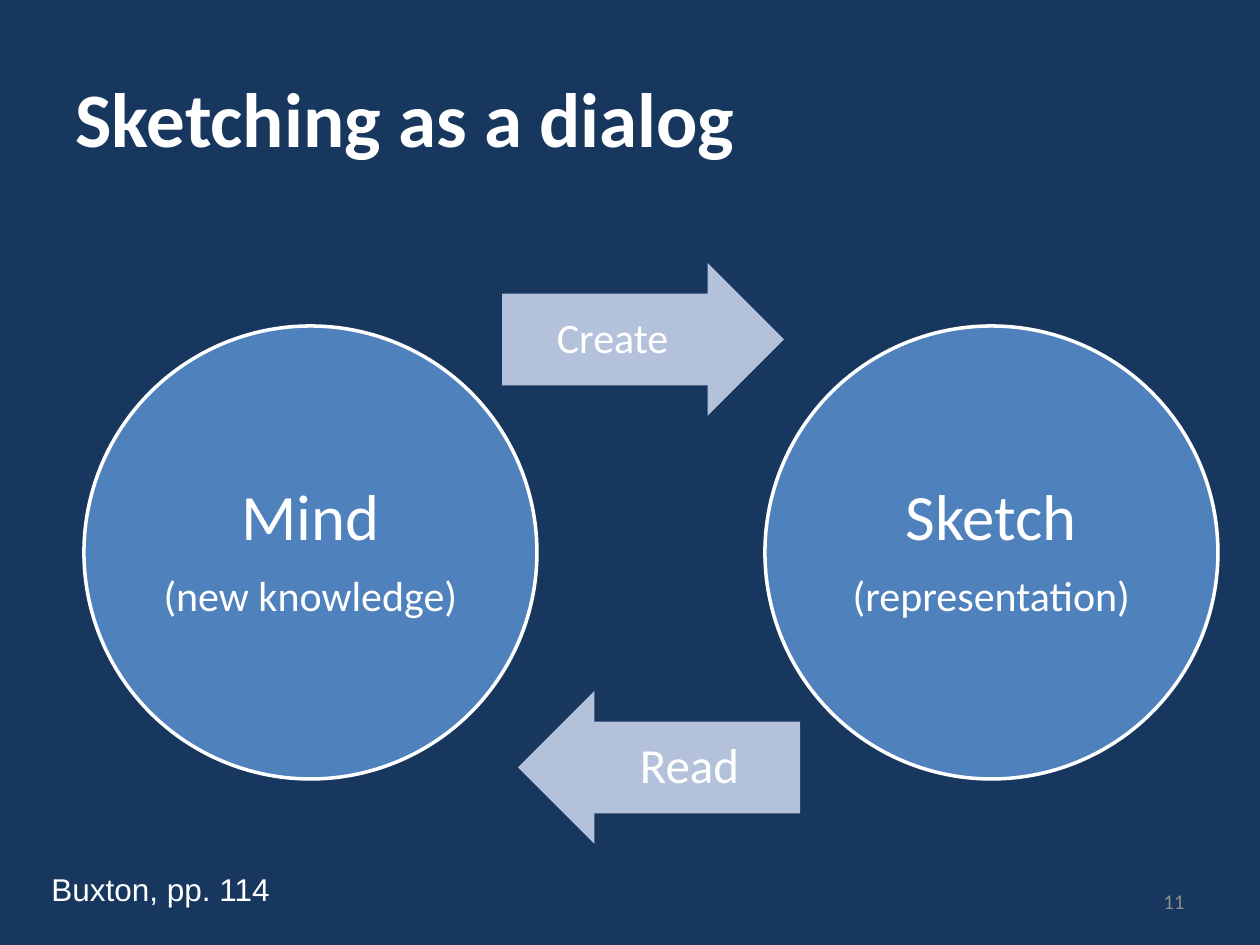
"""Build the slide that shows sketching as a dialog between mind and sketch."""
from dataclasses import dataclass

from pptx import Presentation
from pptx import util as u
from pptx.dml.color import RGBColor
from pptx.enum import shapes, text

EMU_PER_PX = 914400 / 126
NAVY, BLUE, PALE, WHITE, GREY = "17375E", "4F81BD", "B3C1DB", "FFFFFF", "8C8C8C"
CIRCLE_TOP, CIRCLE_SIZE = 326, 453
ARROW_WIDTH, ARROW_HEIGHT, ARROW_INSET = 282, 153, 15
SIDES = ("left", "right", "top", "bottom")
LEFT, CENTER, RIGHT = text.PP_ALIGN.LEFT, text.PP_ALIGN.CENTER, text.PP_ALIGN.RIGHT


@dataclass(frozen=True)
class Circle:
    """One partner of the dialog."""
    left: int
    name: str
    role: str


@dataclass(frozen=True)
class Arrow:
    """One step of the dialog."""
    left: int
    top: int
    label: str
    size: int
    preset: shapes.MSO_SHAPE
    head_side: str


CIRCLES = (
    Circle(84, "Mind", "(new knowledge)"),
    Circle(765, "Sketch", "(representation)"),
)
ARROWS = (
    Arrow(502, 263, "Create", 24, shapes.MSO_SHAPE.RIGHT_ARROW, "right"),
    Arrow(518, 691, "Read", 28, shapes.MSO_SHAPE.LEFT_ARROW, "left"),
)


def px(length: int) -> u.Emu:
    """Turn pixels into EMU."""
    return u.Emu(round(length * EMU_PER_PX))


def paint(fill, color: str) -> None:
    """Give a fill one solid colour."""
    fill.solid()
    fill.fore_color.rgb = RGBColor.from_string(color)


def set_all(target, values: dict) -> None:
    """Set several attributes of one object."""
    for name, value in values.items():
        setattr(target, name, value)


def set_insets(frame, insets: dict) -> None:
    """Set the four insets of a text frame, zero where none is named."""
    set_all(frame, {f"margin_{side}": px(insets.get(side, 0)) for side in SIDES})


def write(para, words: str, size: int, color: str = WHITE, align=CENTER,
          font: str = "Calibri", bold: bool = False) -> None:
    """Write one formatted span into a paragraph."""
    para.alignment = align
    span = para.add_run()
    span.text = words
    set_all(span.font, {"name": font, "size": u.Pt(size), "bold": bold})
    span.font.color.rgb = RGBColor.from_string(color)


def add_figure(page, preset, left: int, top: int, width: int, height: int, color: str):
    """Add a flat, filled shape without an outline."""
    shape = page.shapes.add_shape(preset, px(left), px(top), px(width), px(height))
    shape.shadow.inherit = False
    paint(shape.fill, color)
    shape.line.fill.background()
    set_all(shape.text_frame, {"word_wrap": True, "vertical_anchor": text.MSO_ANCHOR.MIDDLE})
    return shape


def add_circle(page, circle: Circle) -> None:
    """Draw a partner with its name and role."""
    shape = add_figure(page, shapes.MSO_SHAPE.OVAL, circle.left, CIRCLE_TOP,
                       CIRCLE_SIZE, CIRCLE_SIZE, BLUE)
    paint(shape.line.fill, WHITE)
    shape.line.width = u.Pt(2)
    frame = shape.text_frame
    set_insets(frame, dict.fromkeys(SIDES, 6))
    name, role = frame.paragraphs[0], frame.add_paragraph()
    set_all(name, {"line_spacing": 0.9, "space_after": u.Pt(12)})
    role.line_spacing = 0.9
    write(name, circle.name, 37)
    write(role, circle.role, 24)


def add_arrow(page, arrow: Arrow) -> None:
    """Draw a step with its label kept clear of the arrowhead."""
    shape = add_figure(page, arrow.preset, arrow.left, arrow.top,
                       ARROW_WIDTH, ARROW_HEIGHT, PALE)
    shape.adjustments[0], shape.adjustments[1] = 0.6, 0.5
    set_insets(shape.text_frame, {arrow.head_side: ARROW_INSET})
    para = shape.text_frame.paragraphs[0]
    para.line_spacing = 0.9
    write(para, arrow.label, arrow.size)


def add_note(page, left: int, top: int, width: int, height: int, wrap: bool, anchor,
             words: str, size: int, **style) -> None:
    """Add a line of text at the foot of the page."""
    box = page.shapes.add_textbox(px(left), px(top), px(width), px(height))
    set_all(box.text_frame, {"word_wrap": wrap, "vertical_anchor": anchor})
    write(box.text_frame.paragraphs[0], words, size, **style)


def main() -> None:
    """Build and save the deck."""
    deck = Presentation()
    set_all(deck, {"slide_width": px(1260), "slide_height": px(945)})
    page = deck.slides.add_slide(deck.slide_layouts[5])
    paint(page.background.fill, NAVY)

    title = page.shapes.title
    set_all(title, {"left": px(63), "top": px(38), "width": px(1134), "height": px(158)})
    title.text_frame.vertical_anchor = text.MSO_ANCHOR.MIDDLE
    write(title.text_frame.paragraphs[0], "Sketching as a dialog", 44, align=LEFT, bold=True)

    for circle in CIRCLES:
        add_circle(page, circle)
    for arrow in ARROWS:
        add_arrow(page, arrow)

    add_note(page, 903, 876, 294, 50, True, text.MSO_ANCHOR.MIDDLE,
             "11", 12, color=GREY, align=RIGHT)
    add_note(page, 39, 864, 246, 50, False, text.MSO_ANCHOR.TOP,
             "Buxton, pp. 114", 18, align=LEFT, font="Arial")
    deck.save("out.pptx")


if __name__ == "__main__":
    main()
